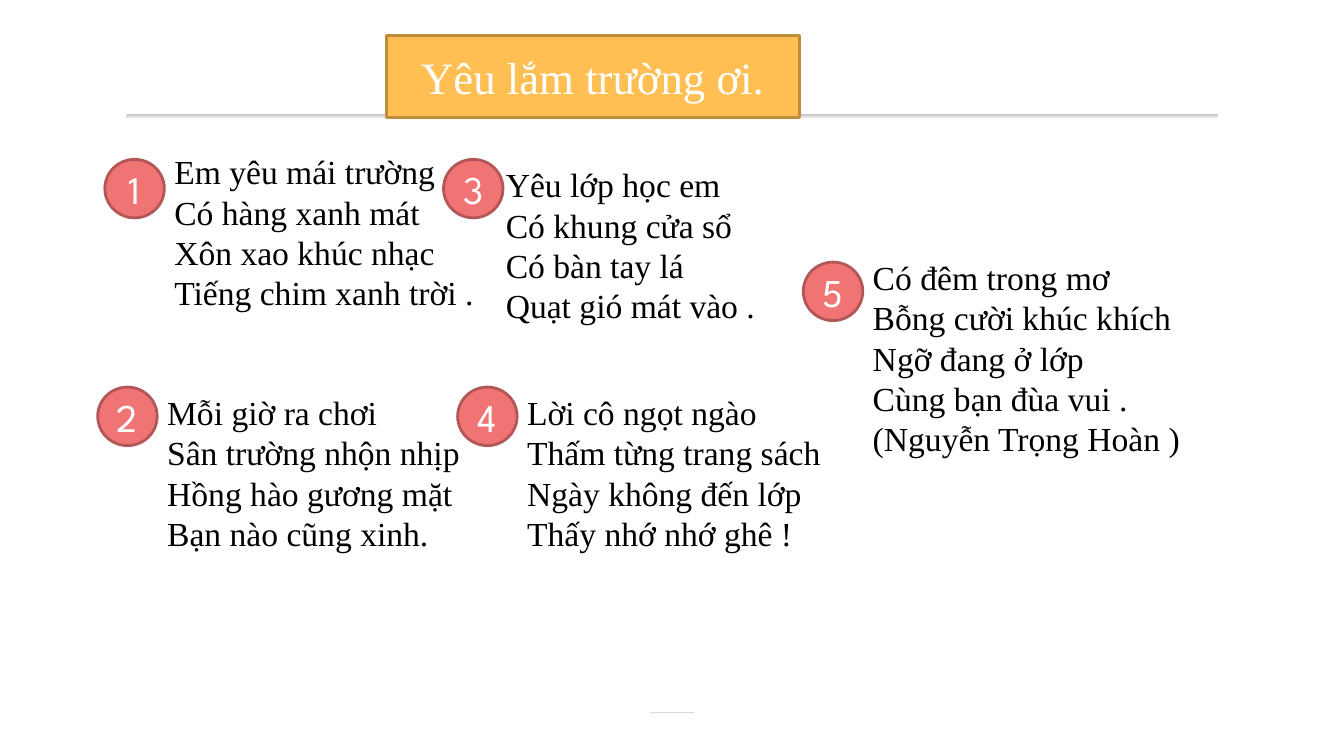
from dataclasses import dataclass

from pptx import Presentation
from pptx.dml.color import RGBColor as RGB
from pptx.enum.shapes import MSO_SHAPE as SHAPE
from pptx.enum.text import MSO_ANCHOR as ANCHOR, MSO_AUTO_SIZE as AUTO, PP_ALIGN as ALIGN
from pptx.oxml import parse_xml
from pptx.oxml.ns import nsdecls
from pptx.util import Pt


@dataclass(frozen=True)
class Theme:
    serif: str = "Times New Roman"
    display: str = "League Spartan"
    title_size: int = 32
    verse_size: int = 24
    badge_size: int = 28
    ink: str = "000000"
    white: str = "FFFFFF"
    rule: str = "BFBFBF"
    title_fill: str = "FFBF53"
    title_line: str = "BD8D3D"
    badge_fill: str = "F17475"
    badge_line: str = "B25657"


class PoemSlide:
    BADGE_W, BADGE_H = 42.5, 41.8
    VERSE_W, LINE_H = 237, 29

    def __init__(self, s, theme):
        self.s, self.theme = s, theme

    def add_text(self, p, text, font, size, color, align):
        p.alignment = align
        r = p.add_run()
        r.text = text
        r.font.name, r.font.size = font, Pt(size)
        r.font.color.rgb = RGB.from_string(color)

    def paint(self, sp, fill, line):
        sp.fill.solid()
        sp.fill.fore_color.rgb = RGB.from_string(fill)
        sp.line.color.rgb = RGB.from_string(line)
        sp.line.width = Pt(2)

    def rule(self, x, y, w, h):
        sp = self.s.shapes.add_shape(SHAPE.ROUNDED_RECTANGLE, Pt(x), Pt(y), Pt(w), Pt(h))
        sp.adjustments[0] = 0.5
        sp.shadow.inherit = False
        sp.line.fill.background()
        sp.fill.gradient()
        sp.fill.gradient_angle = 270
        for stop, color in zip(sp.fill.gradient_stops, (self.theme.rule, self.theme.white)):
            stop.color.rgb = RGB.from_string(color)

    def title(self, text, x, y, w, h):
        t, sp = self.theme, self.s.shapes.title
        sp.left, sp.top, sp.width, sp.height = Pt(x), Pt(y), Pt(w), Pt(h)
        # Rounded outline, in front of the rules
        sp._element.spPr.append(parse_xml(
            f'<a:prstGeom {nsdecls("a")} prst="roundRect"><a:avLst/></a:prstGeom>'))
        sp._element.getparent().append(sp._element)
        self.paint(sp, t.title_fill, t.title_line)
        tf = sp.text_frame
        tf.auto_size, tf.vertical_anchor = AUTO.NONE, ANCHOR.MIDDLE
        self.add_text(tf.paragraphs[0], text, t.serif, t.title_size, t.white, ALIGN.CENTER)

    def stanza(self, x, y, lines):
        t = self.theme
        sp = self.s.shapes.add_textbox(Pt(x), Pt(y), Pt(self.VERSE_W),
                                       Pt(self.LINE_H * len(lines) + 7.2))
        tf = sp.text_frame
        tf.word_wrap = True
        for i, line in enumerate(lines):
            p = tf.add_paragraph() if i else tf.paragraphs[0]
            self.add_text(p, line, t.serif, t.verse_size, t.ink, ALIGN.JUSTIFY)

    def badge(self, x, y, number):
        t = self.theme
        sp = self.s.shapes.add_shape(SHAPE.OVAL, Pt(x), Pt(y), Pt(self.BADGE_W), Pt(self.BADGE_H))
        sp.shadow.inherit = False
        self.paint(sp, t.badge_fill, t.badge_line)
        tf = sp.text_frame
        tf.margin_left = tf.margin_right = tf.margin_top = tf.margin_bottom = 0
        tf.vertical_anchor = ANCHOR.MIDDLE
        self.add_text(tf.paragraphs[0], str(number), t.display, t.badge_size, t.white, ALIGN.CENTER)


# Badge position, text position, verse lines
STANZAS = [
    ((74.9, 113.8), (117.4, 104.4),
     ["Em yêu mái trường", "Có hàng xanh mát", "Xôn xao khúc nhạc", "Tiếng chim xanh trời ."]),
    ((69.8, 276.5), (112.3, 276.5),
     ["Mỗi giờ ra chơi", "Sân trường nhộn nhịp", "Hồng hào gương mặt", "Bạn nào cũng xinh."]),
    ((316.8, 113.8), (354.2, 113.8),
     ["Yêu lớp học em", "Có khung cửa sổ", "Có bàn tay lá", "Quạt gió mát vào ."]),
    ((326.9, 276.5), (369.4, 276.5),
     ["Lời cô ngọt ngào", "Thấm từng trang sách", "Ngày không đến lớp", "Thấy nhớ nhớ ghê !"]),
    ((573.8, 187.2), (616.3, 180),
     ["Có đêm trong mơ", "Bỗng cười khúc khích", "Ngỡ đang ở lớp", "Cùng bạn đùa vui .",
      "(Nguyễn Trọng Hoàn )"]),
]


def main():
    prs = Presentation()
    prs.slide_width, prs.slide_height = Pt(960), Pt(540)
    poem = PoemSlide(prs.slides.add_slide(prs.slide_layouts[5]), Theme())

    # Header and footer rules
    poem.rule(90, 81.4, 780.5, 3.6)
    poem.rule(464.4, 508.3, 31, 1.44)

    # Title
    poem.title("Yêu lắm trường ơi.", 275.8, 25.2, 295.2, 59)

    # Numbered stanzas
    for number, (badge_at, verse_at, lines) in enumerate(STANZAS, 1):
        poem.stanza(*verse_at, lines)
        poem.badge(*badge_at, number)

    prs.save("out.pptx")


if __name__ == "__main__":
    main()
